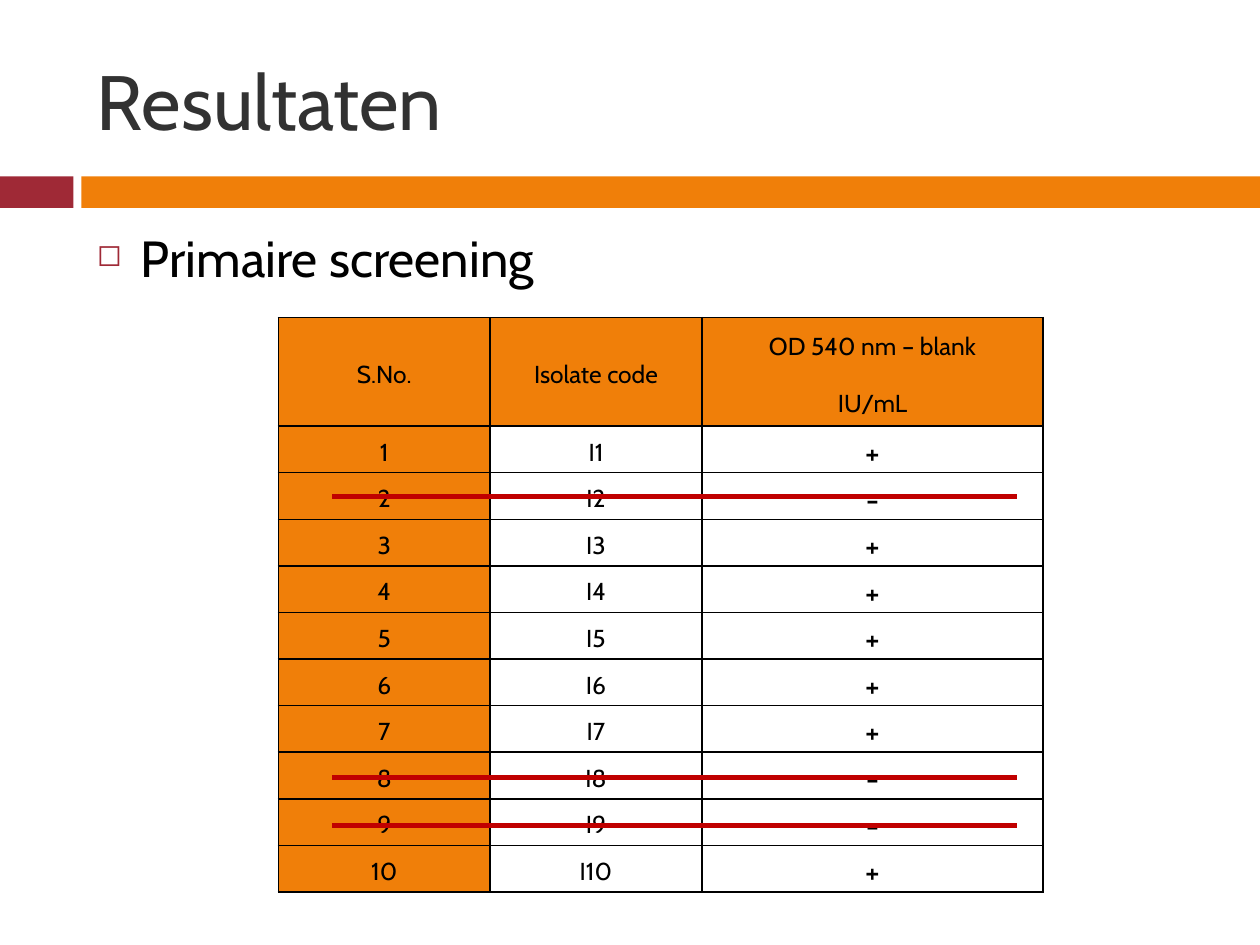
from lxml import etree
from pptx import Presentation
from pptx.dml.color import RGBColor
from pptx.enum.shapes import MSO_CONNECTOR, MSO_SHAPE
from pptx.enum.text import MSO_ANCHOR, PP_ALIGN
from pptx.oxml.ns import qn
from pptx.util import Pt

RECTANGLE = MSO_SHAPE.RECTANGLE
STRAIGHT = MSO_CONNECTOR.STRAIGHT
MIDDLE, TOP = MSO_ANCHOR.MIDDLE, MSO_ANCHOR.TOP
CENTER = PP_ALIGN.CENTER

FONT = "Cabin"
COLORS = {
    "red": "9F2936",
    "orange": "F07F09",
    "title": "323232",
    "black": "000000",
    "strike": "C00000",
}
HEADERS = ["S.No.", "Isolate code", "OD 540 nm – blank\nIU/mL"]
SCREENING = "+-+++++--+"
COLUMN_WIDTHS = [121, 121, 195]
HEADER_HEIGHT, ROW_HEIGHT = 62, 26.64
TABLE_LEFT, TABLE_TOP = 159.1, 181.5
STRIKE_TOPS = [283.7, 444.2, 471.6]


def rgb(name):
    """Return the named colour."""
    return RGBColor.from_string(COLORS[name])


def format_runs(paragraph, size, color):
    """Set font, size and colour on every run of a paragraph."""
    for run in paragraph.runs:
        run.font.name = FONT
        run.font.size = Pt(size)
        run.font.color.rgb = rgb(color)


def add_bar(slide, left, width, color):
    """Add one part of the band under the title."""
    shape = slide.shapes.add_shape(RECTANGLE, Pt(left), Pt(100.8), Pt(width), Pt(18))
    shape.shadow.inherit = False
    shape.fill.solid()
    shape.fill.fore_color.rgb = rgb(color)
    shape.line.fill.background()


def add_text(slide, text, top, height, size, color, anchor):
    """Add a text box of the content width and return its paragraph."""
    shape = slide.shapes.add_textbox(Pt(48.24), Pt(top), Pt(642.24), Pt(height))
    text_frame = shape.text_frame
    text_frame.word_wrap = True
    text_frame.vertical_anchor = anchor
    text_frame.text = text
    paragraph = text_frame.paragraphs[0]
    format_runs(paragraph, size, color)
    return paragraph


def add_bullet(paragraph):
    """Give a paragraph a hanging square bullet."""
    paragraph.space_before = Pt(7)
    properties = paragraph._p.get_or_add_pPr()
    properties.set("marL", str(Pt(25.2)))
    properties.set("indent", str(-Pt(25.2)))
    bullet_color = etree.SubElement(properties, qn("a:buClr"))
    etree.SubElement(bullet_color, qn("a:srgbClr"), val=COLORS["red"])
    etree.SubElement(properties, qn("a:buSzPct"), val="60000")
    etree.SubElement(properties, qn("a:buChar"), char="◻")


def add_borders(cell):
    """Draw a thin black line on all four sides of a cell."""
    properties = cell._tc.get_or_add_tcPr()
    for side in ("lnL", "lnR", "lnT", "lnB"):
        line = etree.SubElement(properties, qn(f"a:{side}"), w=str(Pt(1)))
        fill = etree.SubElement(line, qn("a:solidFill"))
        etree.SubElement(fill, qn("a:srgbClr"), val=COLORS["black"])


def fill_cell(cell, text, size, is_header):
    """Write and format one table cell."""
    cell.margin_left = cell.margin_right = Pt(5)
    cell.margin_top = cell.margin_bottom = 0
    cell.vertical_anchor = MIDDLE
    add_borders(cell)
    if is_header:
        cell.fill.solid()
        cell.fill.fore_color.rgb = rgb("orange")
    else:
        cell.fill.background()
    cell.text_frame.text = text
    for paragraph in cell.text_frame.paragraphs:
        paragraph.alignment = CENTER
        paragraph.line_spacing = 1.2
        paragraph.space_before = paragraph.space_after = Pt(6)
        format_runs(paragraph, size, "black")


def add_screening_table(slide):
    """Add the table of isolates and their screening results."""
    rows = [HEADERS] + [
        [str(number), f"I{number}", result]
        for number, result in enumerate(SCREENING, start=1)
    ]
    height = HEADER_HEIGHT + ROW_HEIGHT * len(SCREENING)
    table = slide.shapes.add_table(
        len(rows), len(HEADERS), Pt(TABLE_LEFT), Pt(TABLE_TOP),
        Pt(sum(COLUMN_WIDTHS)), Pt(height),
    ).table
    for column, width in zip(table.columns, COLUMN_WIDTHS):
        column.width = Pt(width)
    for row_index, values in enumerate(rows):
        table.rows[row_index].height = Pt(ROW_HEIGHT if row_index else HEADER_HEIGHT)
        for column_index, value in enumerate(values):
            size = 18 if row_index and column_index == 2 else 14
            is_header = row_index == 0 or column_index == 0
            fill_cell(table.cell(row_index, column_index), value, size, is_header)


def add_strike(slide, top):
    """Strike out one negative row."""
    connector = slide.shapes.add_connector(STRAIGHT, Pt(190), Pt(top), Pt(581), Pt(top))
    connector.line.color.rgb = rgb("strike")
    connector.line.width = Pt(3)
    etree.SubElement(connector._element.spPr, qn("a:effectLst"))


def main():
    """Build the results slide."""
    presentation = Presentation()
    presentation.slide_width, presentation.slide_height = Pt(720), Pt(540)
    slide = presentation.slides.add_slide(presentation.slide_layouts[6])
    add_bar(slide, 0, 42, "red")
    add_bar(slide, 46.5, 673.5, "orange")
    add_text(slide, "Resultaten", 18, 78, 44, "title", MIDDLE)
    add_bullet(add_text(slide, "Primaire screening", 126, 354, 29, "black", TOP))
    add_screening_table(slide)
    for top in STRIKE_TOPS:
        add_strike(slide, top)
    presentation.save("out.pptx")


if __name__ == "__main__":
    main()
